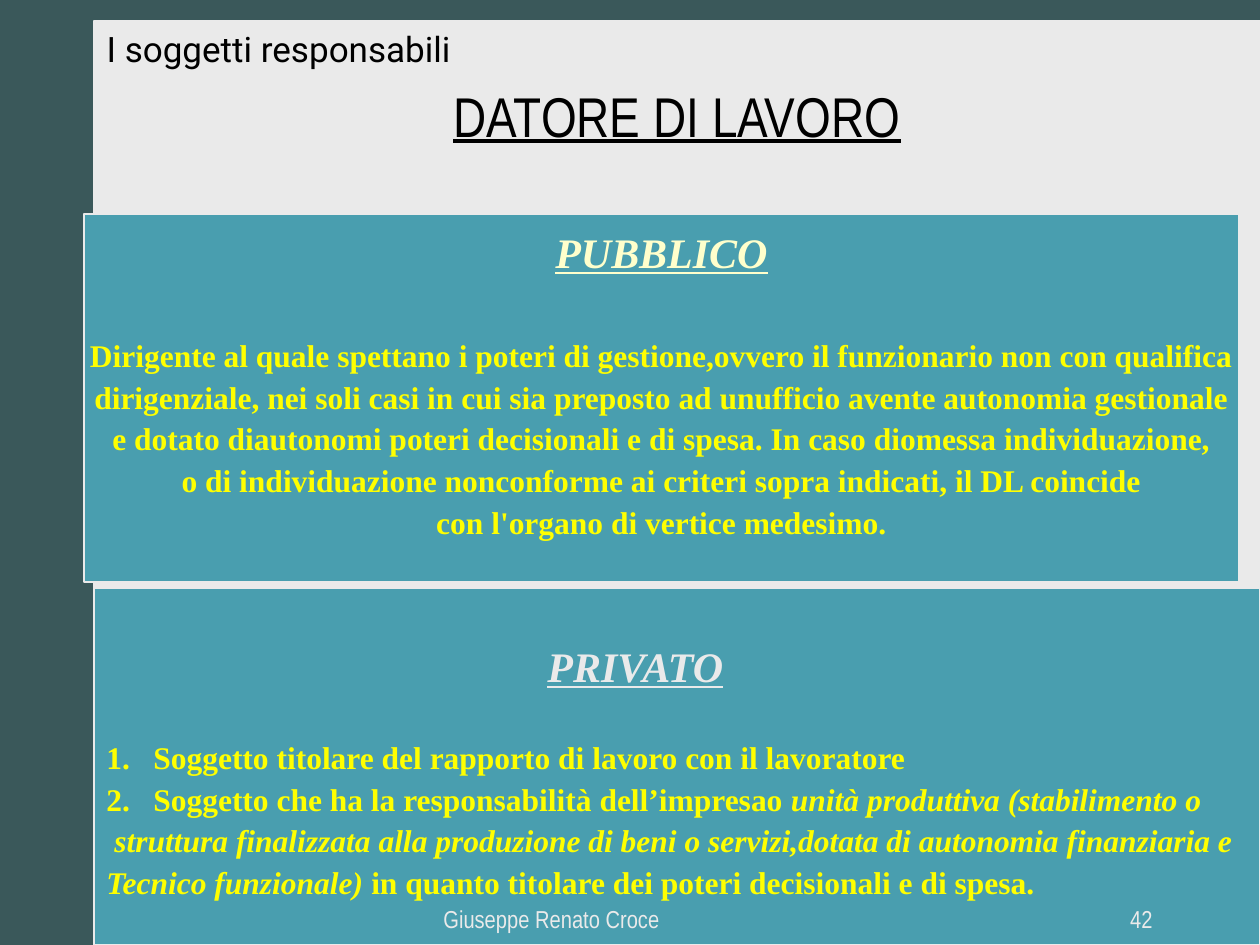
from pptx import Presentation
from pptx import util as u
from pptx.dml.color import RGBColor
from pptx.enum import shapes, text
from pptx.oxml.ns import qn
from lxml import etree

PX = 914400 / 126  # EMU in one px
THEME = dict(
    back="3A585A", panel="EAEAEA", box="499EAF", ink="000000",
    cream="FFFFCC", yellow="FFFF00", light="EAEAEA",
    serif="Times New Roman", narrow="Arial Narrow", sans="Roboto",
    lead=20, title=32, head=24, body=18, foot=14,
)
T = THEME
MID, LEFT, RIGHT = text.PP_ALIGN.CENTER, text.PP_ALIGN.LEFT, text.PP_ALIGN.RIGHT


def px(*vals):
    return [u.Emu(round(v * PX)) for v in vals]


def write(frame, *runs, font, size, color, align=LEFT, gap=0, line=1.0,
          left=0, hang=0, number=False, bold=False, under=False):
    """Add a paragraph; each run is a (words, italic) pair."""
    par = frame.paragraphs[0]
    if par.runs:
        par = frame.add_paragraph()
    par.alignment, par.line_spacing, par.space_before = align, line, u.Pt(gap)
    prop = par._p.get_or_add_pPr()
    prop.set("marL", str(px(left)[0]))
    prop.set("indent", str(px(-hang)[0]))
    kind = "a:buAutoNum" if number else "a:buNone"
    mark = etree.SubElement(prop, qn(kind))
    if number:
        mark.set("type", "arabicPeriod")
    for words, slant in runs:
        run = par.add_run()
        run.text = words
        face = run.font
        face.name, face.size = font, u.Pt(size)
        face.bold, face.italic, face.underline = bold, slant, under
        face.color.rgb = RGBColor.from_string(color)


deck = Presentation()
deck.slide_width, deck.slide_height = u.Inches(10), u.Inches(7.5)
slide = deck.slides.add_slide(deck.slide_layouts[1])
fill = slide.background.fill
fill.solid()
fill.fore_color.rgb = RGBColor.from_string(T["back"])
name = slide.shapes.title
name._element.getparent().remove(name._element)

# Light panel with the heading, then the two boxes
panel = slide.placeholders[1]
panel.left, panel.top, panel.width, panel.height = px(94, 21, 1166, 892)
rect = shapes.MSO_SHAPE.RECTANGLE
public = slide.shapes.add_shape(rect, *px(84, 214, 1155, 368))
private = slide.shapes.add_shape(rect, *px(94, 588, 1166, 357))
for shape, color, inset, wrap in (
        (panel, "panel", 6, True), (public, "box", 18, False),
        (private, "box", 58, False)):
    shape.fill.solid()
    shape.fill.fore_color.rgb = RGBColor.from_string(T[color])
    shape.line.color.rgb = RGBColor.from_string(T["light"])
    shape.line.width = u.Pt(0.75)
    frame = shape.text_frame
    frame.auto_size = text.MSO_AUTO_SIZE.NONE
    frame.vertical_anchor = text.MSO_ANCHOR.TOP
    frame.word_wrap = wrap
    frame.margin_top = px(inset)[0]
for shape in (public, private):
    shape.shadow.inherit = False

# Heading
write(panel.text_frame, ("I soggetti responsabili", False),
      font=T["sans"], size=T["lead"], color=T["ink"])
write(panel.text_frame, ("DATORE DI LAVORO", False), font=T["narrow"],
      size=T["title"], color=T["ink"], align=MID, gap=7, under=True)

# Public employer
head = dict(font=T["serif"], size=T["head"], line=0.9, bold=True, under=True)
body = dict(font=T["serif"], size=T["body"], line=0.9, bold=True,
            color=T["yellow"])
write(public.text_frame, ("PUBBLICO", True), color=T["cream"], align=MID, **head)
for i, words in enumerate((
        "Dirigente al quale spettano i poteri di gestione,ovvero il funzionario non con qualifica",
        "dirigenziale, nei soli casi in cui sia preposto ad unufficio avente autonomia gestionale",
        "e dotato diautonomi poteri decisionali e di spesa. In caso diomessa individuazione,",
        "o di individuazione nonconforme ai criteri sopra indicati, il DL coincide",
        "con l'organo di vertice medesimo.")):
    write(public.text_frame, (words, False), align=MID,
          gap=4.4 if i else 36, **body)

# Private employer
item = dict(left=47, hang=47, number=True)
write(private.text_frame, ("PRIVATO", True), color=T["light"], left=441, **head)
for runs, gap, form in (
        ([("Soggetto titolare del rapporto di lavoro con il lavoratore", False)],
         29, item),
        ([("Soggetto che ha la responsabilità dell’impresao ", False),
          ("unità produttiva (stabilimento o", True)], 4.4, item),
        ([("struttura finalizzata alla produzione di beni o servizi,dotata di "
           "autonomia finanziaria e", True)], 4.4, dict(left=8)),
        ([("Tecnico funzionale) ", True),
          ("in quanto titolare dei poteri decisionali e di spesa.", False)],
         4.4, {})):
    write(private.text_frame, *runs, gap=gap, **form, **body)

# Footer: author and page number
for words, left, width, align in (
        ("Giuseppe Renato Croce", 431, 399, LEFT), ("42", 903, 262, RIGHT)):
    frame = slide.shapes.add_textbox(*px(left, 877, width, 63)).text_frame
    frame.word_wrap = True
    frame.vertical_anchor = text.MSO_ANCHOR.BOTTOM
    write(frame, (words, False), font=T["narrow"], size=T["foot"],
          color=T["light"], align=align)

deck.save("out.pptx")
